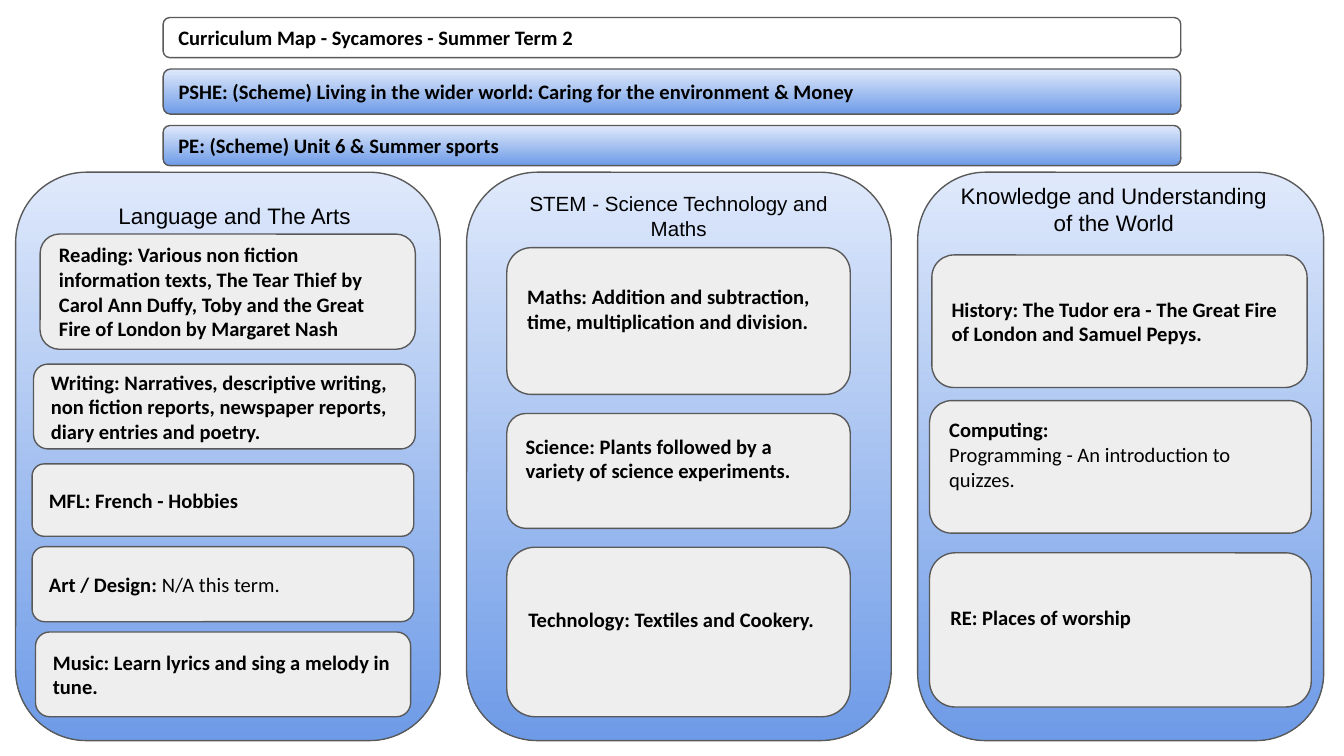
from pptx import Presentation
from pptx.dml.color import RGBColor
from pptx.enum.shapes import MSO_SHAPE
from pptx.enum.text import MSO_ANCHOR, PP_ALIGN
from pptx.util import Pt

BLACK = RGBColor(0x00, 0x00, 0x00)
OUTLINE = RGBColor(0x59, 0x59, 0x59)
CARD_GREY = RGBColor(0xEE, 0xEE, 0xEE)
PALE_BLUE = RGBColor(0xDF, 0xE9, 0xFB)
MID_BLUE = RGBColor(0x6E, 0x9B, 0xE7)

INSET = 7.2
LINE_HEIGHT = 13.4

deck = Presentation()
deck.slide_width, deck.slide_height = Pt(720), Pt(405)
page = deck.slides.add_slide(deck.slide_layouts[6])


def add_rounded(left, top, width, height, fill):
    """Add an outlined rounded box; fill is "gradient", a colour or None."""
    box = page.shapes.add_shape(MSO_SHAPE.FLOWCHART_ALTERNATE_PROCESS,
                                Pt(left), Pt(top), Pt(width), Pt(height))
    box.shadow.inherit = False
    box.line.color.rgb = OUTLINE
    box.line.width = Pt(0.75)
    if fill is None:
        box.fill.background()
    elif fill == "gradient":
        box.fill.gradient()
        box.fill.gradient_angle = 270
        for stop, colour in zip(box.fill.gradient_stops, (PALE_BLUE, MID_BLUE)):
            stop.color.rgb = colour
    else:
        box.fill.solid()
        box.fill.fore_color.rgb = fill
    return box


def write(box, lines, font_name, size, align=PP_ALIGN.LEFT, left_inset=INSET, bottom_inset=INSET):
    """Fill a box with paragraphs, each a list of (text, bold) spans."""
    frame = box.text_frame
    frame.word_wrap = True
    frame.margin_left, frame.margin_bottom = Pt(left_inset), Pt(bottom_inset)
    frame.margin_top = frame.margin_right = Pt(INSET)
    for index, spans in enumerate(lines):
        para = frame.add_paragraph() if index else frame.paragraphs[0]
        para.alignment = align
        para.font.name, para.font.size = font_name, Pt(size)
        para.font.color.rgb = BLACK
        for text, bold in spans:
            span = para.add_run()
            span.text = text
            span.font.bold = bold


# Column panels
for left, width in ((8.4, 227.5), (250, 227.5), (491.6, 217.5)):
    add_rounded(left, 92.3, width, 304.5, "gradient")

# Subject cards: left, top, width, height, lines of space below the text, text
cards = [
    (21.5, 125.4, 201, 61.7, 0, [[("Reading: Various non fiction information texts, The Tear Thief by "
                                   "Carol Ann Duffy, Toby and the Great Fire of London by Margaret Nash", True)]]),
    (18, 195.1, 204.5, 45.4, 0, [[("Writing: Narratives, descriptive writing, non fiction reports, "
                                   "newspaper reports, diary entries and poetry.", True)]]),
    (17.2, 248.5, 204.5, 38.8, 0, [[("MFL: French - Hobbies", True)]]),
    (17.2, 292.9, 204.5, 40.2, 0, [[("Art / Design:", True), (" N/A this term.", False)]]),
    (19, 338.6, 201, 45.4, 0, [[("Music: Learn lyrics and sing a melody in tune.", True)]]),
    (271.5, 132.7, 184, 78.6, 1, [[("Maths: Addition and subtraction, time, multiplication and division.", True)]]),
    (271.5, 221.5, 184, 61.6, 1, [[("Science: Plants followed by a variety of science experiments.", True)]]),
    (271.5, 293.2, 184, 90.8, 1, [[("Technology: Textiles and Cookery.", True)]]),
    (499.2, 136.6, 201, 71, 0, [[("History: The Tudor era - The Great Fire of London and Samuel Pepys.", True)]]),
    (498, 214.6, 204.5, 71, 1, [[("Computing:", True)],
                                [("Programming - An introduction to quizzes.", False)]]),
    (498, 296.2, 204.5, 82.6, 1, [[("RE: Places of worship", True)]]),
]
for left, top, width, height, lines_below, lines in cards:
    card = add_rounded(left, top, width, height, CARD_GREY)
    card.text_frame.vertical_anchor = MSO_ANCHOR.MIDDLE
    write(card, lines, "Calibri", 11, bottom_inset=INSET + lines_below * LINE_HEIGHT)

# Banners
banners = [
    (9.4, 21.5, None, "Curriculum Map - Sycamores - Summer Term 2"),
    (37, 24.2, "gradient", "PSHE: (Scheme) Living in the wider world: Caring for the environment & Money"),
    (67.3, 21.5, "gradient", "PE: (Scheme) Unit 6 & Summer sports"),
]
for top, height, fill, text in banners:
    banner = add_rounded(87.4, top, 545.2, height, fill)
    banner.text_frame.vertical_anchor = MSO_ANCHOR.MIDDLE
    write(banner, [[(text, True)]], "Calibri", 11)

# Column headings
headings = [
    (29.5, 101.2, 24.5, 12, PP_ALIGN.LEFT, 34, "Language and The Arts"),
    (271.5, 95.2, 21.6, 11, PP_ALIGN.CENTER, INSET, "STEM - Science Technology and Maths"),
    (504.6, 90.5, 45.4, 12, PP_ALIGN.CENTER, INSET, "Knowledge and Understanding of the World"),
]
for left, top, height, size, align, left_inset, text in headings:
    heading = page.shapes.add_textbox(Pt(left), Pt(top), Pt(184.3), Pt(height))
    write(heading, [[(text, False)]], "Arial", size, align, left_inset)

deck.save("out.pptx")
